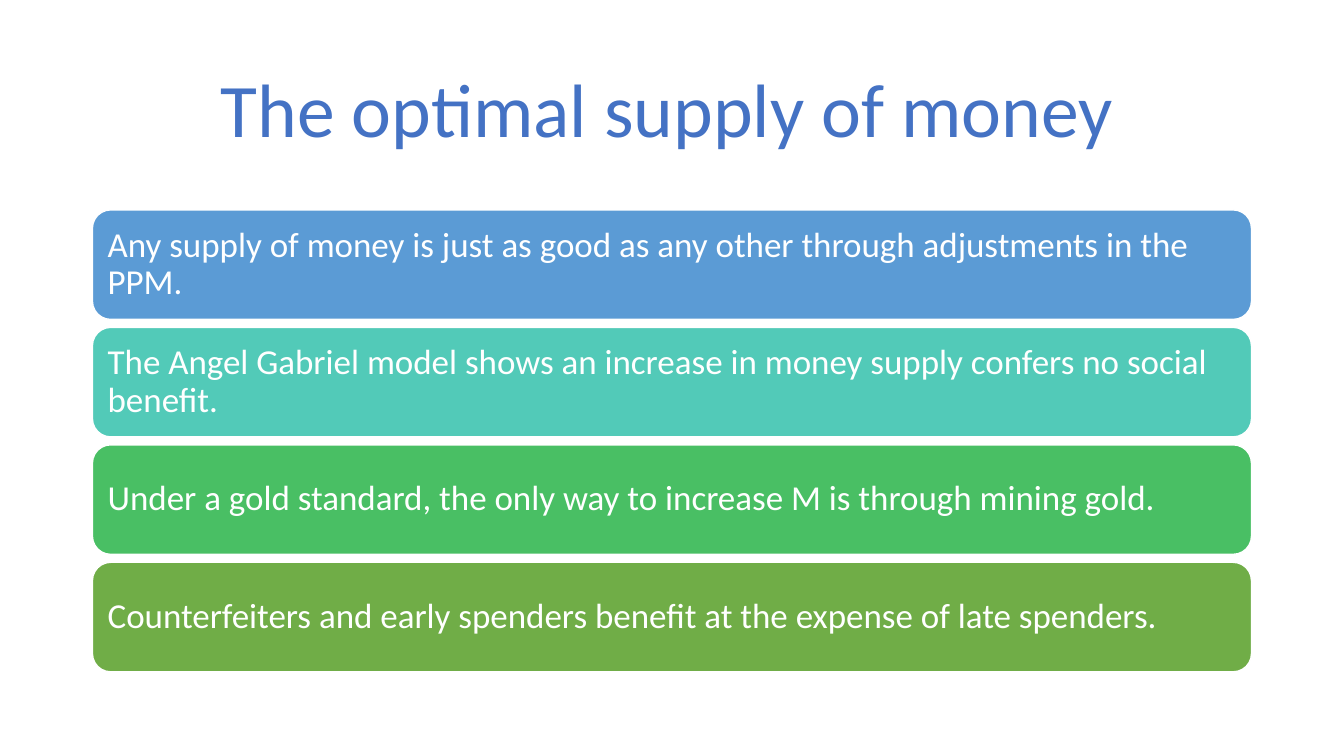
import pptx
import pptx.dml.color
import pptx.enum.shapes
import pptx.enum.text
import pptx.util
from pptx.util import Cm

FONT = "Calibri"
WHITE = "FFFFFF"
POINTS = [
    ("Any supply of money is just as good as any other through adjustments in the PPM.", "5B9BD5"),
    ("The Angel Gabriel model shows an increase in money supply confers no social benefit.", "52CAB8"),
    ("Under a gold standard, the only way to increase M is through mining gold.", "49BF64"),
    ("Counterfeiters and early spenders benefit at the expense of late spenders.", "70AD47"),
]
BAR_LEFT, BAR_TOP = 2.33, 5.29
BAR_WIDTH, BAR_HEIGHT = 29.21, 2.76
BAR_PITCH = 2.96


def color(hex_value):
    return pptx.dml.color.RGBColor.from_string(hex_value)


def write_text(shape, text, size, hex_value):
    """Fill a shape with one left-aligned, vertically centred paragraph."""
    frame = shape.text_frame
    frame.text = text
    frame.word_wrap = True
    frame.auto_size = pptx.enum.text.MSO_AUTO_SIZE.NONE
    frame.vertical_anchor = pptx.enum.text.MSO_ANCHOR.MIDDLE
    para = frame.paragraphs[0]
    para.alignment = pptx.enum.text.PP_ALIGN.LEFT
    para.line_spacing = 0.9
    font = para.runs[0].font
    font.name = FONT
    font.size = pptx.util.Pt(size)
    font.color.rgb = color(hex_value)


def place_title(page, text):
    title = page.shapes.title
    title.left, title.top = Cm(5.31), Cm(1.02)
    title.width, title.height = Cm(26.21), Cm(3.68)
    write_text(title, text, 54, "4472C4")


def add_bar(page, top, text, fill):
    bar = page.shapes.add_shape(
        pptx.enum.shapes.MSO_SHAPE.ROUNDED_RECTANGLE,
        Cm(BAR_LEFT), Cm(top), Cm(BAR_WIDTH), Cm(BAR_HEIGHT))
    bar.shadow.inherit = False
    bar.fill.solid()
    bar.fill.fore_color.rgb = color(fill)
    bar.line.color.rgb = color(WHITE)
    bar.line.width = pptx.util.Pt(1)
    write_text(bar, text, 25, WHITE)
    frame = bar.text_frame
    frame.margin_left = frame.margin_right = Cm(0.25)
    frame.margin_top = frame.margin_bottom = Cm(0.25)


def main():
    deck = pptx.Presentation()
    deck.slide_width, deck.slide_height = Cm(33.87), Cm(19.05)
    page = deck.slides.add_slide(deck.slide_layouts.get_by_name("Title Only"))

    # Heading
    place_title(page, "The optimal supply of money")

    # Stack of statement bars
    for index, (text, fill) in enumerate(POINTS):
        add_bar(page, BAR_TOP + index * BAR_PITCH, text, fill)

    deck.save("out.pptx")


if __name__ == "__main__":
    main()
